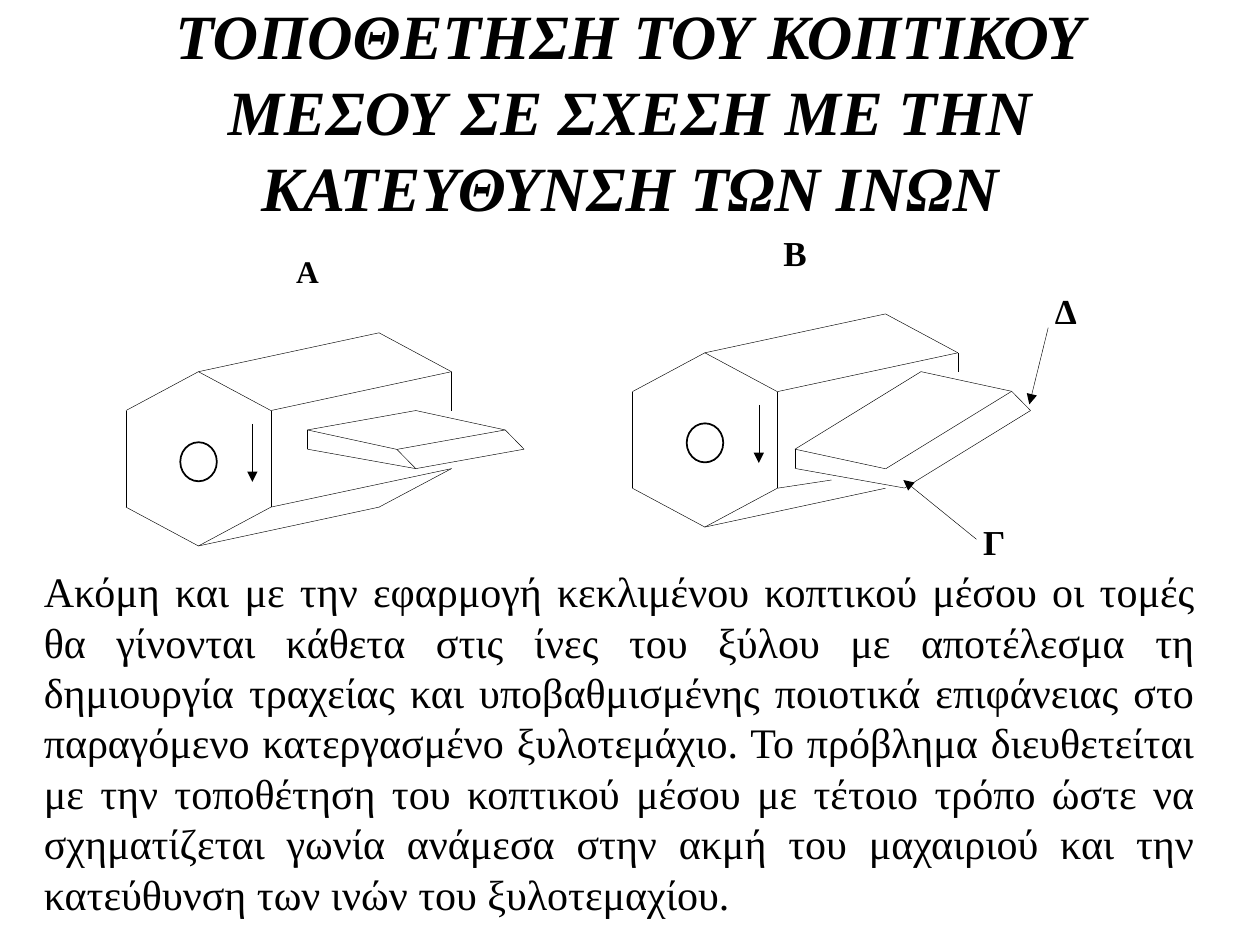
from lxml import etree
from pptx import Presentation
from pptx.dml.color import RGBColor
from pptx.enum.shapes import MSO_CONNECTOR, MSO_SHAPE
from pptx.enum.text import MSO_ANCHOR, PP_ALIGN
from pptx.oxml.ns import qn
from pptx.util import Pt

STRAIGHT = MSO_CONNECTOR.STRAIGHT
OVAL = MSO_SHAPE.OVAL
CENTER, JUSTIFY = PP_ALIGN.CENTER, PP_ALIGN.JUSTIFY
TOP, MIDDLE = MSO_ANCHOR.TOP, MSO_ANCHOR.MIDDLE
COLORS = {"ink": "000000"}
FONT = "Times New Roman"

TITLE = "ΤΟΠΟΘΕΤΗΣΗ ΤΟΥ ΚΟΠΤΙΚΟΥ ΜΕΣΟΥ ΣΕ ΣΧΕΣΗ ΜΕ ΤΗΝ ΚΑΤΕΥΘΥΝΣΗ ΤΩΝ ΙΝΩΝ"
BODY = (
    "Ακόμη και με την εφαρμογή κεκλιμένου κοπτικού μέσου οι τομές θα γίνονται "
    "κάθετα στις ίνες του ξύλου με αποτέλεσμα τη δημιουργία τραχείας και "
    "υποβαθμισμένης ποιοτικά επιφάνειας στο παραγόμενο κατεργασμένο ξυλοτεμάχιο. "
    "Το πρόβλημα διευθετείται με την τοποθέτηση του κοπτικού μέσου με τέτοιο τρόπο "
    "ώστε να σχηματίζεται γωνία ανάμεσα στην ακμή του μαχαιριού και την κατεύθυνση "
    "των ινών του ξυλοτεμαχίου."
)
LABELS = [
    ("Α", 154.8, 143.3, 18),
    ("Β", 433.4, 131.8, 20),
    ("Δ", 588.2, 164.9, 20),
    ("Γ", 547.2, 296.6, 20),
]
HEXAGON = [(41.4, 0), (82.8, 22.2), (82.8, 77.4), (41.4, 99.6), (0, 77.4), (0, 22.2)]
FIBRES = (103.2, -22.2)


def shift(point, step):
    """Return the point moved by the step."""
    return point[0] + step[0], point[1] + step[1]


def add_text(page, text, frame, size, align, anchor=TOP, inset=None, bold=False, italic=False):
    """Add a wrapped text box with one formatted paragraph."""
    box = page.shapes.add_textbox(*map(Pt, frame))
    text_frame = box.text_frame
    text_frame.word_wrap = True
    text_frame.vertical_anchor = anchor
    if inset is not None:
        text_frame.margin_left = text_frame.margin_right = Pt(inset)
        text_frame.margin_top = text_frame.margin_bottom = Pt(inset)
    text_frame.text = text
    para = text_frame.paragraphs[0]
    para.alignment = align
    font = para.runs[0].font
    font.name, font.size, font.bold, font.italic = FONT, Pt(size), bold, italic
    font.color.rgb = RGBColor.from_string(COLORS["ink"])


def add_line(page, start, end, arrow=False):
    """Draw a hairline, optionally with an arrowhead at its end."""
    line = page.shapes.add_connector(STRAIGHT, *map(Pt, (*start, *end)))
    line.line.width = Pt(0.25)
    line.line.color.rgb = RGBColor.from_string(COLORS["ink"])
    if arrow:
        etree.SubElement(line.line._get_or_add_ln(), qn("a:tailEnd"), type="triangle")
    etree.SubElement(line._element.spPr, qn("a:effectLst"))


def add_wood(page, origin, side_length):
    """Draw the hexagonal wood piece with its hole and feed arrow."""
    corners = [shift(origin, corner) for corner in HEXAGON]
    for start, end in zip(corners, corners[1:] + corners[:1]):
        add_line(page, start, end)
    apex, right, _, bottom = corners[:4]
    back_apex, back_right = shift(apex, FIBRES), shift(right, FIBRES)
    for start, end in [
        (apex, back_apex),
        (right, back_right),
        (back_apex, back_right),
        (bottom, shift(bottom, FIBRES)),
        (back_right, shift(back_right, (0, side_length))),
    ]:
        add_line(page, start, end)
    hole = page.shapes.add_shape(OVAL, *map(Pt, (*shift(origin, (31, 40.3)), 20.9, 22.3)))
    hole.shadow.inherit = False
    hole.fill.background()
    hole.line.width = Pt(1)
    hole.line.color.rgb = RGBColor.from_string(COLORS["ink"])
    add_line(page, shift(origin, (72.2, 29.8)), shift(origin, (72.2, 63)), arrow=True)


def add_knife(page, left, edge, width):
    """Draw the bevelled knife from its left corner, edge and width; return its front tip."""
    back, front = shift(left, edge), shift(left, width)
    right = shift(front, edge)
    low_left = shift(left, (0, 11))
    low_front, low_right = shift(front, (10.8, 11)), shift(right, (10.8, 11))
    outline = [low_front, low_left, left, back, right, low_right, low_front]
    for start, end in zip(outline, outline[1:]):
        add_line(page, start, end)
    add_line(page, left, front)
    add_line(page, front, right)
    return front, low_front


def main():
    """Build the slide and save it."""
    deck = Presentation()
    deck.slide_width, deck.slide_height = Pt(720), Pt(540)
    page = deck.slides.add_slide(deck.slide_layouts[6])

    add_text(page, TITLE, (54, 18, 612, 90), 36, CENTER, MIDDLE, bold=True, italic=True)
    for text, left, top, size in LABELS:
        add_text(page, text, (left, top, 41.8, 33.1), size, CENTER, inset=0.72, bold=True)

    add_wood(page, (72, 212.4), 22.2)
    add_line(page, (154.8, 289.8), (258, 267.8))
    add_line(page, (258, 267.8), (216.6, 289.8))
    front, low_front = add_knife(page, (175.7, 245.7), (61.9, -11.1), (51.1, 11.1))
    add_line(page, front, low_front)

    add_wood(page, (361.4, 201.6), 11)
    add_line(page, (444.2, 279), (475.2, 274.3))
    add_knife(page, (454.3, 256.7), (72, -44.3), (51.8, 11.2))
    add_line(page, (558, 308.2), (516.2, 274.3), arrow=True)
    add_line(page, (599, 187.2), (588.2, 231.1), arrow=True)

    add_text(page, BODY, (18, 319.7, 671.8, 208.8), 24, JUSTIFY)
    deck.save("out.pptx")


if __name__ == "__main__":
    main()
